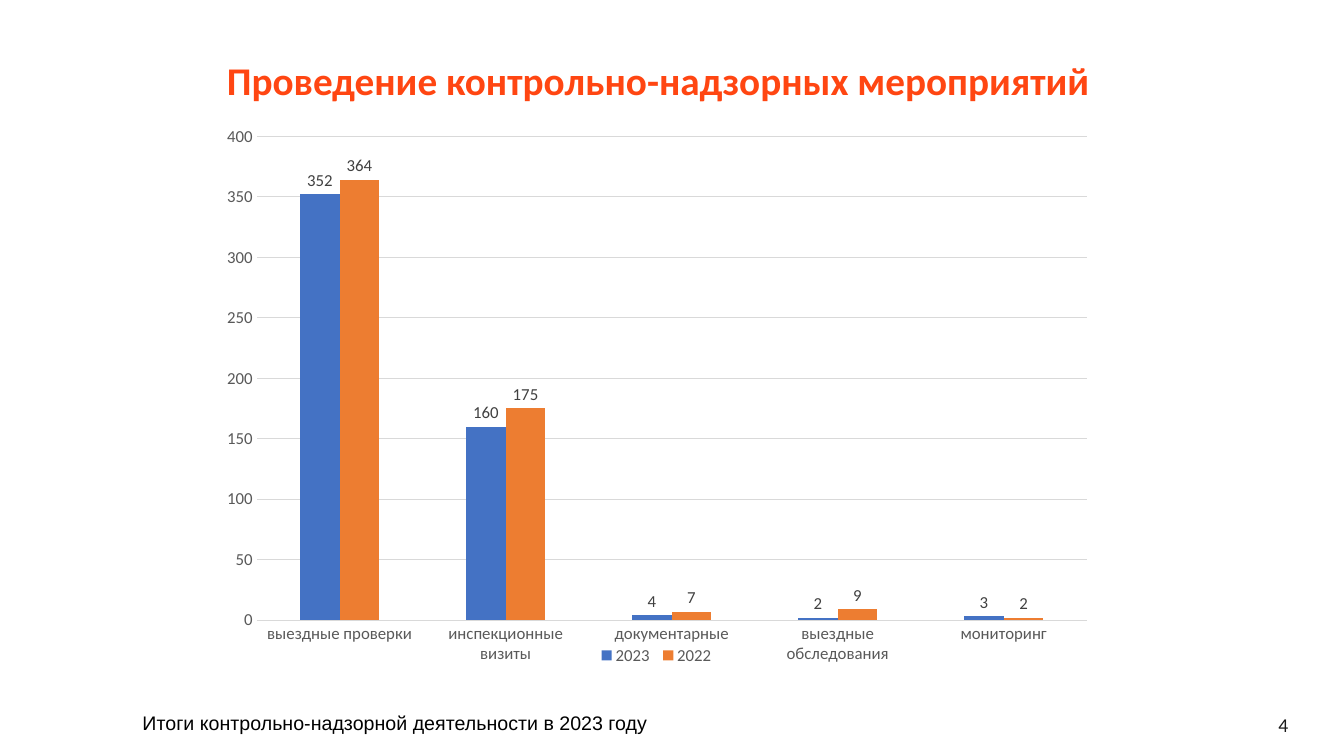
from pptx import Presentation
from pptx import util as u
from pptx.chart.data import CategoryChartData
from pptx.dml.color import RGBColor
from pptx.enum import chart as ch, text
from pptx.oxml import parse_xml
from pptx.oxml.ns import nsdecls, qn

WIDTH, HEIGHT = 13.33, 7.5
ORANGE_RED, BLACK, DARK, GREY, LABEL, RULE = (
    "FF4612", "000000", "1A1A1A", "595959", "404040", "D9D9D9")

MEASURES = ["выездные проверки", "инспекционные визиты", "документарные",
            "выездные обследования", "мониторинг"]
YEARS = {
    "2023": ([352, 160, 4, 2, 3], "4472C4"),
    "2022": ([364, 175, 7, 9, 2], "ED7D31"),
}


def rgb(code):
    return RGBColor.from_string(code)


def set_layout(element, index, x, y, w, h, target=""):
    """Fix an area of the chart, given in shares of the chart's size."""
    for old in element.findall(qn("c:layout")):
        element.remove(old)
    sizes = "".join(f'<c:{tag} val="{share}"/>'
                    for tag, share in zip("xywh", (x, y, w, h)))
    element.insert(index, parse_xml(
        f'<c:layout {nsdecls("c")}><c:manualLayout>{target}'
        f'<c:xMode val="edge"/><c:yMode val="edge"/>{sizes}'
        '</c:manualLayout></c:layout>'))


class ReportSlide:
    font = "Calibri"

    def __init__(self, deck):
        self.slide = deck.slides.add_slide(deck.slide_layouts[6])
        self.slide.background.fill.solid()
        self.slide.background.fill.fore_color.rgb = rgb("FFFFFF")

    def box(self, x, y, w, h):
        """Turn shares of the slide's size into lengths."""
        return [u.Inches(share * side) for share, side in
                zip((x, y, w, h), (WIDTH, HEIGHT, WIDTH, HEIGHT))]

    def style(self, font, size, color, name=None, bold=False):
        font.name = name or self.font
        font.size = u.Pt(size)
        font.bold = bold
        font.color.rgb = rgb(color)

    def words(self, place, wording, size, color, align="LEFT", anchor="TOP",
              name=None, bold=False, spacing=1.0):
        frame = self.slide.shapes.add_textbox(*self.box(*place)).text_frame
        frame.word_wrap = True
        frame.margin_left = frame.margin_right = 0
        frame.margin_top = frame.margin_bottom = 0
        frame.vertical_anchor = getattr(text.MSO_ANCHOR, anchor)
        line = frame.paragraphs[0]
        line.alignment = getattr(text.PP_ALIGN, align)
        line.line_spacing = spacing
        run = line.add_run()
        run.text = wording
        self.style(run.font, size, color, name, bold)

    def axis(self, axis):
        axis.major_tick_mark = axis.minor_tick_mark = ch.XL_TICK_MARK.NONE
        self.style(axis.tick_labels.font, 12, GREY)

    def rule(self, line):
        line.color.rgb = rgb(RULE)
        line.width = u.Pt(0.75)

    def columns(self, place, categories, series):
        data = CategoryChartData()
        data.categories = categories
        for name, (values, _) in series.items():
            data.add_series(name, values)
        chart = self.slide.shapes.add_chart(
            ch.XL_CHART_TYPE.COLUMN_CLUSTERED, *self.box(*place), data).chart
        chart.has_title = False
        self.style(chart.font, 10, BLACK)

        self.axis(chart.category_axis)
        self.rule(chart.category_axis.format.line)
        scale = chart.value_axis
        self.axis(scale)
        scale.minimum_scale, scale.maximum_scale, scale.major_unit = 0, 400, 50
        scale.format.line.fill.background()
        self.rule(scale.major_gridlines.format.line)

        plot = chart.plots[0]
        plot.gap_width, plot.overlap = 219, 0
        plot.vary_by_categories = False
        for bars, (_, color) in zip(plot.series, series.values()):
            bars.format.fill.solid()
            bars.format.fill.fore_color.rgb = rgb(color)
            bars.invert_if_negative = False
            labels = bars.data_labels
            labels.show_value = True
            labels.position = ch.XL_LABEL_POSITION.OUTSIDE_END
            self.style(labels.font, 12, LABEL)

        chart.has_legend = True
        legend = chart.legend
        legend.position = ch.XL_LEGEND_POSITION.BOTTOM
        legend.include_in_layout = False
        self.style(legend.font, 12, GREY)
        plot_area = chart.element.find(".//" + qn("c:plotArea"))
        set_layout(plot_area, 0, 0.054, 0.036, 0.926, 0.81,
                   '<c:layoutTarget val="inner"/>')
        set_layout(chart.element.find(".//" + qn("c:legend")), 1,
                   0.43, 0.88, 0.14, 0.05)


def main():
    deck = Presentation()
    deck.slide_width, deck.slide_height = u.Inches(WIDTH), u.Inches(HEIGHT)
    report = ReportSlide(deck)
    report.words((0.044, 0.059, 0.891, 0.101),
                 "Проведение контрольно-надзорных мероприятий", 28, ORANGE_RED,
                 align="CENTER", anchor="MIDDLE", bold=True, spacing=0.9)
    report.columns((0.155, 0.152, 0.667, 0.79), MEASURES, YEARS)
    report.words((0.106, 0.941, 0.8, 0.032),
                 "Итоги контрольно-надзорной деятельности в 2023 году",
                 14, BLACK, name="Arial")
    report.words((0.94, 0.943, 0.0185, 0.032), "4", 14, DARK,
                 align="RIGHT", anchor="MIDDLE")
    deck.save("out.pptx")


if __name__ == "__main__":
    main()
